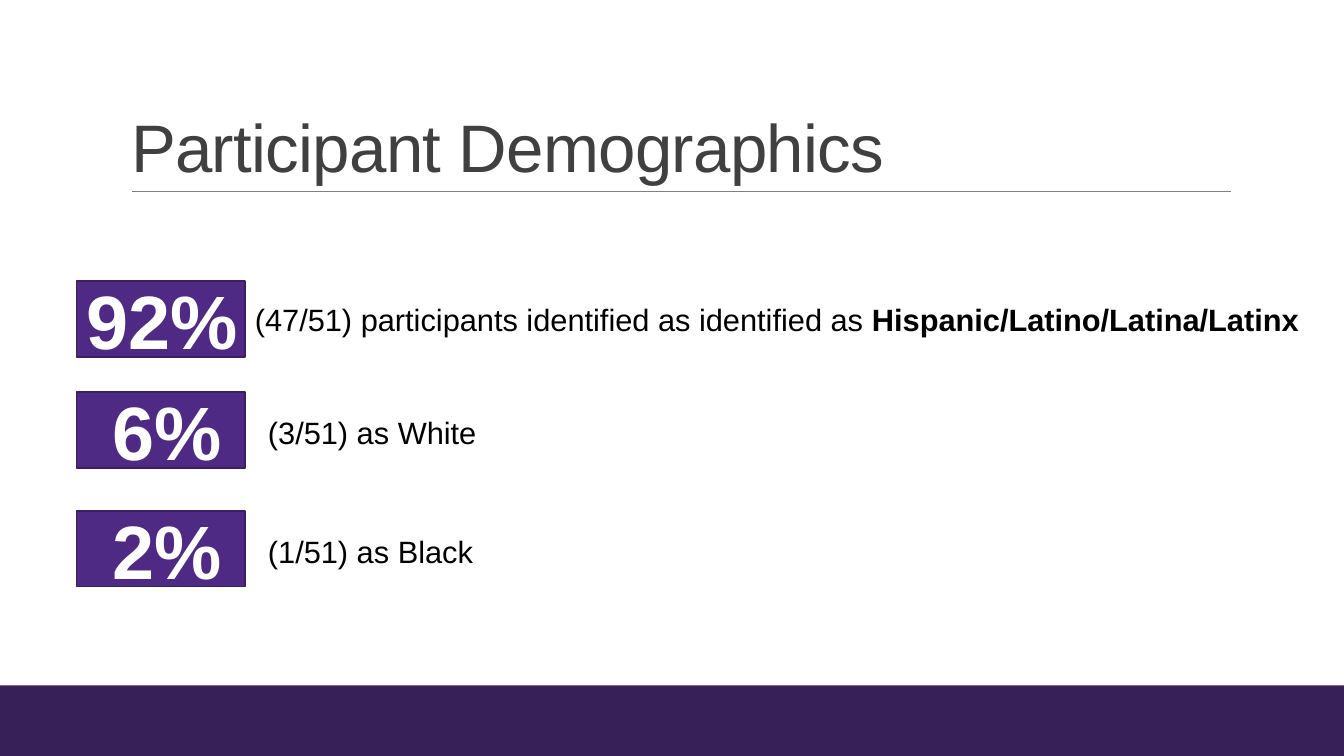
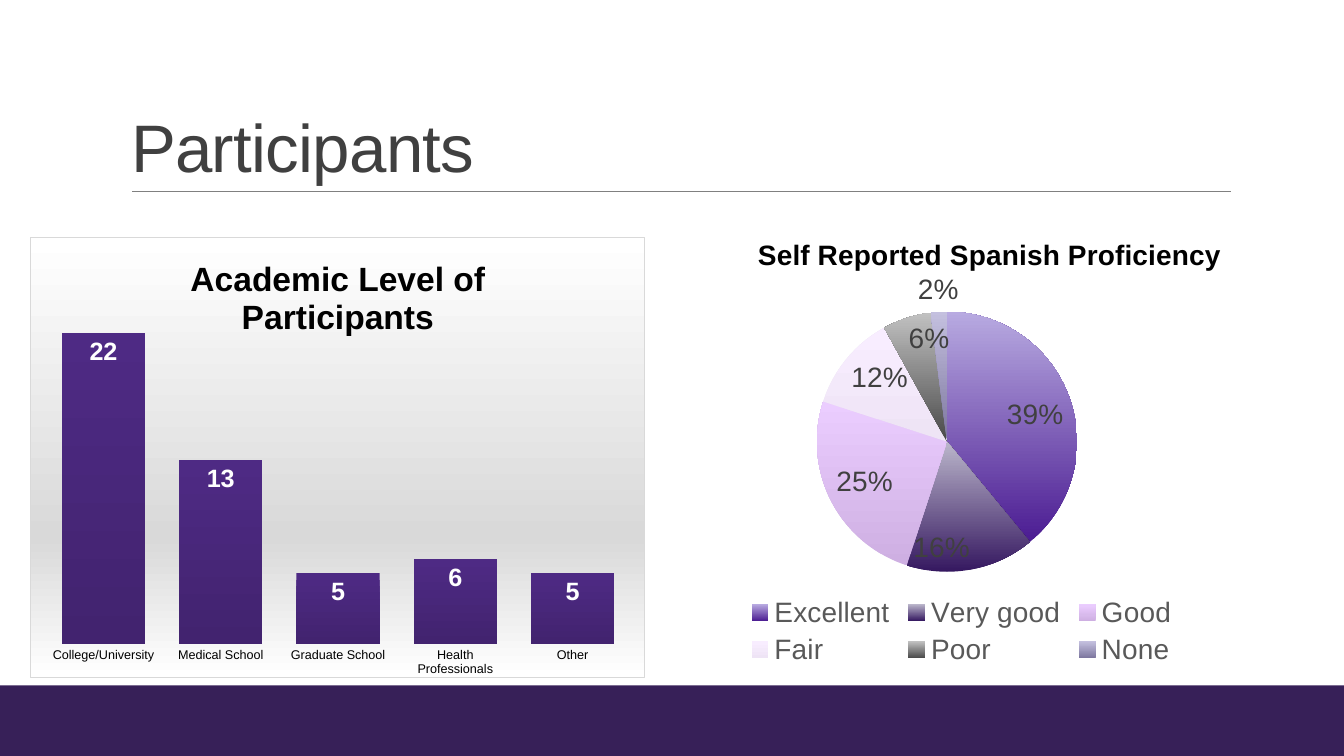
from dataclasses import dataclass

from lxml import etree
from pptx import Presentation
from pptx.chart.data import CategoryChartData
from pptx.dml.color import RGBColor
from pptx.enum.chart import XL_CHART_TYPE, XL_LABEL_POSITION, XL_LEGEND_POSITION, XL_TICK_MARK
from pptx.enum.shapes import MSO_CONNECTOR, MSO_SHAPE
from pptx.enum.text import MSO_ANCHOR, MSO_AUTO_SIZE, PP_ALIGN
from pptx.oxml import parse_xml
from pptx.oxml.ns import nsdecls, qn
from pptx.util import Inches, Pt


@dataclass(frozen=True)
class Theme:
    font: str = "Arial"
    band: str = "372058"
    purple: str = "4E2A84"
    purple_deep: str = "42236F"
    purple_edge: str = "3A1F62"
    rule: str = "808080"
    heading: str = "404040"
    legend: str = "595959"
    silver: str = "D9D9D9"
    white: str = "FFFFFF"
    black: str = "000000"
    title_size: float = 48
    figure_size: float = 54
    body_size: float = 22
    column_title_size: float = 24
    pie_size: float = 20
    column_label_size: float = 18
    axis_size: float = 9
    chart_size: float = 10


THEME = Theme()
# (bottom colour, top colour) for each slice
SLICE_COLORS = [
    ("4B1C92", "B8AAE1"),
    ("351860", "BBB6CB"),
    ("CEAFE2", "EBCDFF"),
    ("EEE4F5", "F8EDFF"),
    ("494949", "C1C1C1"),
    ("7C769E", "C4C0DF"),
]


def rgb(color):
    return RGBColor.from_string(color)


def format_font(font, size, color, bold=False):
    font.name = THEME.font
    font.size = Pt(size)
    font.bold = bold
    font.color.rgb = rgb(color)


def write_text(frame, *parts, size=THEME.body_size, color=THEME.black, bold=False,
               align=PP_ALIGN.LEFT, anchor=MSO_ANCHOR.TOP):
    """Write one paragraph; a part is a string or a (string, bold) pair."""
    frame.word_wrap = True
    frame.auto_size = MSO_AUTO_SIZE.NONE
    frame.vertical_anchor = anchor
    paragraph = frame.paragraphs[0]
    paragraph.alignment = align
    for part in parts:
        text, part_bold = (part, bold) if isinstance(part, str) else part
        run = paragraph.add_run()
        run.text = text
        format_font(run.font, size, color, part_bold)
    return paragraph


def add_box(slide, left, top, width, height, fill, line=None):
    shape = slide.shapes.add_shape(
        MSO_SHAPE.RECTANGLE, Inches(left), Inches(top), Inches(width), Inches(height))
    shape.shadow.inherit = False
    shape.fill.solid()
    shape.fill.fore_color.rgb = rgb(fill)
    if line:
        shape.line.color.rgb = rgb(line)
        shape.line.width = Pt(1.25)
    else:
        shape.line.fill.background()
    return shape


def add_titled_slide(presentation, title):
    slide = presentation.slides.add_slide(presentation.slide_layouts[5])
    add_box(slide, 0, 6.8, 13.33, 0.7, THEME.band)
    rule = slide.shapes.add_connector(
        MSO_CONNECTOR.STRAIGHT, Inches(1.31), Inches(1.9), Inches(12.21), Inches(1.9))
    rule.line.color.rgb = rgb(THEME.rule)
    rule.line.width = Pt(0.5)
    etree.SubElement(rule._element.spPr, qn("a:effectLst"))

    heading = slide.shapes.title
    heading.left, heading.top = Inches(1.2), Inches(0.31)
    heading.width, heading.height = Inches(11), Inches(1.59)
    paragraph = write_text(heading.text_frame, title, size=THEME.title_size,
                           color=THEME.heading, anchor=MSO_ANCHOR.BOTTOM)
    paragraph.line_spacing = 0.85
    paragraph.runs[0].font._element.set("spc", "-50")
    return slide


def add_statistic(slide, left, top, figure, parts, inset, label_offset):
    """Place a percentage box and its label; label_offset is (right, down) from the box."""
    box = add_box(slide, left, top, 1.67, 0.75, THEME.purple, THEME.purple_edge)
    frame = box.text_frame
    frame.margin_left = Inches(inset)
    frame.margin_right = frame.margin_top = frame.margin_bottom = 0
    write_text(frame, figure, size=THEME.figure_size, color=THEME.white, bold=True,
               align=PP_ALIGN.CENTER, anchor=MSO_ANCHOR.MIDDLE)
    right, down = label_offset
    label = slide.shapes.add_textbox(
        Inches(left + right), Inches(top + down), Inches(10.63), Inches(0.47))
    write_text(label.text_frame, *parts)


def manual_layout(x, y, width=None, height=None):
    inner = '<c:layoutTarget val="inner"/>' if width else ""
    size = f'<c:w val="{width}"/><c:h val="{height}"/>' if width else ""
    return parse_xml(
        f'<c:layout {nsdecls("c")}><c:manualLayout>{inner}'
        '<c:xMode val="edge"/><c:yMode val="edge"/>'
        f'<c:x val="{x}"/><c:y val="{y}"/>{size}</c:manualLayout></c:layout>')


def fill_gradient(fill, start, end, angle):
    fill.gradient()
    fill.gradient_angle = angle
    for stop, color in zip(fill.gradient_stops, (start, end)):
        stop.color.rgb = rgb(color)


def add_base_chart(slide, kind, box, values, title, title_size, title_at, plot_box):
    data = CategoryChartData()
    data.categories = list(values)
    data.add_series("Series 1", list(values.values()))
    chart = slide.shapes.add_chart(kind, *map(Inches, box), data).chart
    format_font(chart.font, THEME.chart_size, THEME.black)
    chart.has_legend = False
    chart.has_title = True
    write_text(chart.chart_title.text_frame, title, size=title_size, bold=True,
               align=PP_ALIGN.CENTER)
    plot_area = chart._chartSpace.chart.plotArea
    title_element = chart.chart_title._element
    for parent in (plot_area, title_element):
        for layout in parent.findall(qn("c:layout")):
            parent.remove(layout)
    plot_area.insert(0, manual_layout(*plot_box))
    if title_at:
        title_element.find(qn("c:tx")).addnext(manual_layout(*title_at))
    return chart


def format_labels(labels, size, color, bold=False):
    labels.position = XL_LABEL_POSITION.INSIDE_END
    format_font(labels.font, size, color, bold)


def shade_chart_area(chart):
    stops = ((0, THEME.white), (68, THEME.silver), (100, THEME.white))
    stop_xml = "".join(
        f'<a:gs pos="{position * 1000}"><a:srgbClr val="{color}"/></a:gs>'
        for position, color in stops)
    chart._chartSpace.chart.addnext(parse_xml(
        f'<c:spPr {nsdecls("c", "a")}><a:gradFill><a:gsLst>{stop_xml}</a:gsLst>'
        '<a:lin ang="5400000" scaled="0"/></a:gradFill>'
        f'<a:ln w="{Pt(0.75)}"><a:solidFill><a:srgbClr val="{THEME.silver}"/>'
        '</a:solidFill></a:ln></c:spPr>'))


def add_level_chart(slide, box):
    levels = {"College/University": 22, "Medical School": 13, "Graduate School": 5,
              "Health Professionals": 6, "Other": 5}
    chart = add_base_chart(
        slide, XL_CHART_TYPE.COLUMN_CLUSTERED, box, levels,
        "Academic Level of Participants", THEME.column_title_size, None,
        (0.023, 0.122, 0.955, 0.801))
    shade_chart_area(chart)
    plot = chart.plots[0]
    plot.gap_width = 41
    plot.vary_by_categories = False
    series = plot.series[0]
    series.invert_if_negative = False
    fill_gradient(series.format.fill, THEME.purple, THEME.purple_deep, 270)
    series.data_labels.show_value = True
    format_labels(series.data_labels, THEME.column_label_size, THEME.white, bold=True)

    category_axis, value_axis = chart.category_axis, chart.value_axis
    category_axis.major_tick_mark = XL_TICK_MARK.NONE
    category_axis.format.line.fill.background()
    format_font(category_axis.tick_labels.font, THEME.axis_size, THEME.black)
    value_axis.minimum_scale, value_axis.maximum_scale = 0, 25
    value_axis.has_major_gridlines = False
    value_axis.visible = False


def add_proficiency_chart(slide, box):
    ratings = {"Excellent": 39, "Very good": 16, "Good": 25, "Fair": 12, "Poor": 6, "None": 2}
    chart = add_base_chart(
        slide, XL_CHART_TYPE.PIE, box, ratings,
        "Self Reported Spanish Proficiency", THEME.pie_size, (0.21, 0.01),
        (0.299, 0.146, 0.362, 0.673))
    plot = chart.plots[0]
    plot.vary_by_categories = True
    series = plot.series[0]
    for index, (bottom, top) in enumerate(SLICE_COLORS):
        fill_gradient(series.points[index].format.fill, bottom, top, 90)

    labels = series.data_labels
    labels.show_value = False
    labels.show_percentage = True
    labels.number_format = "0%"
    labels.number_format_is_linked = False
    format_labels(labels, THEME.pie_size, THEME.heading)
    smallest = series.points[len(ratings) - 1].data_label
    format_font(smallest.font, THEME.pie_size, THEME.heading)
    smallest.position = XL_LABEL_POSITION.OUTSIDE_END
    for tag, shown in (("showVal", "0"), ("showPercent", "1")):
        for flag in chart._chartSpace.xpath(f".//c:dLbl/c:{tag}"):
            flag.set("val", shown)

    chart.has_legend = True
    chart.legend.position = XL_LEGEND_POSITION.BOTTOM
    chart.legend.include_in_layout = False
    format_font(chart.legend.font, THEME.pie_size, THEME.legend)


def build_demographics(presentation):
    slide = add_titled_slide(presentation, "Participant Demographics")
    statistics = [
        (2.79, "92%", ("(47/51) participants identified as identified as ",
                       ("Hispanic/Latino/Latina/Latinx", True)), 0.03, (1.67, 0.14)),
        (3.89, "6%", ("(3/51) as White",), 0.13, (1.8, 0.17)),
        (5.07, "2%", ("(1/51) as Black",), 0.13, (1.8, 0.17)),
    ]
    for top, figure, parts, inset, label_offset in statistics:
        add_statistic(slide, 0.76, top, figure, parts, inset, label_offset)


def build_participants(presentation):
    slide = add_titled_slide(presentation, "Participants")
    add_level_chart(slide, (0.3, 2.35, 6.1, 4.38))
    add_proficiency_chart(slide, (5.97, 2.26, 7.13, 4.4))


def main():
    presentation = Presentation()
    presentation.slide_width = Inches(13.33)
    presentation.slide_height = Inches(7.5)
    build_demographics(presentation)
    build_participants(presentation)
    presentation.save("out.pptx")


if __name__ == "__main__":
    main()
